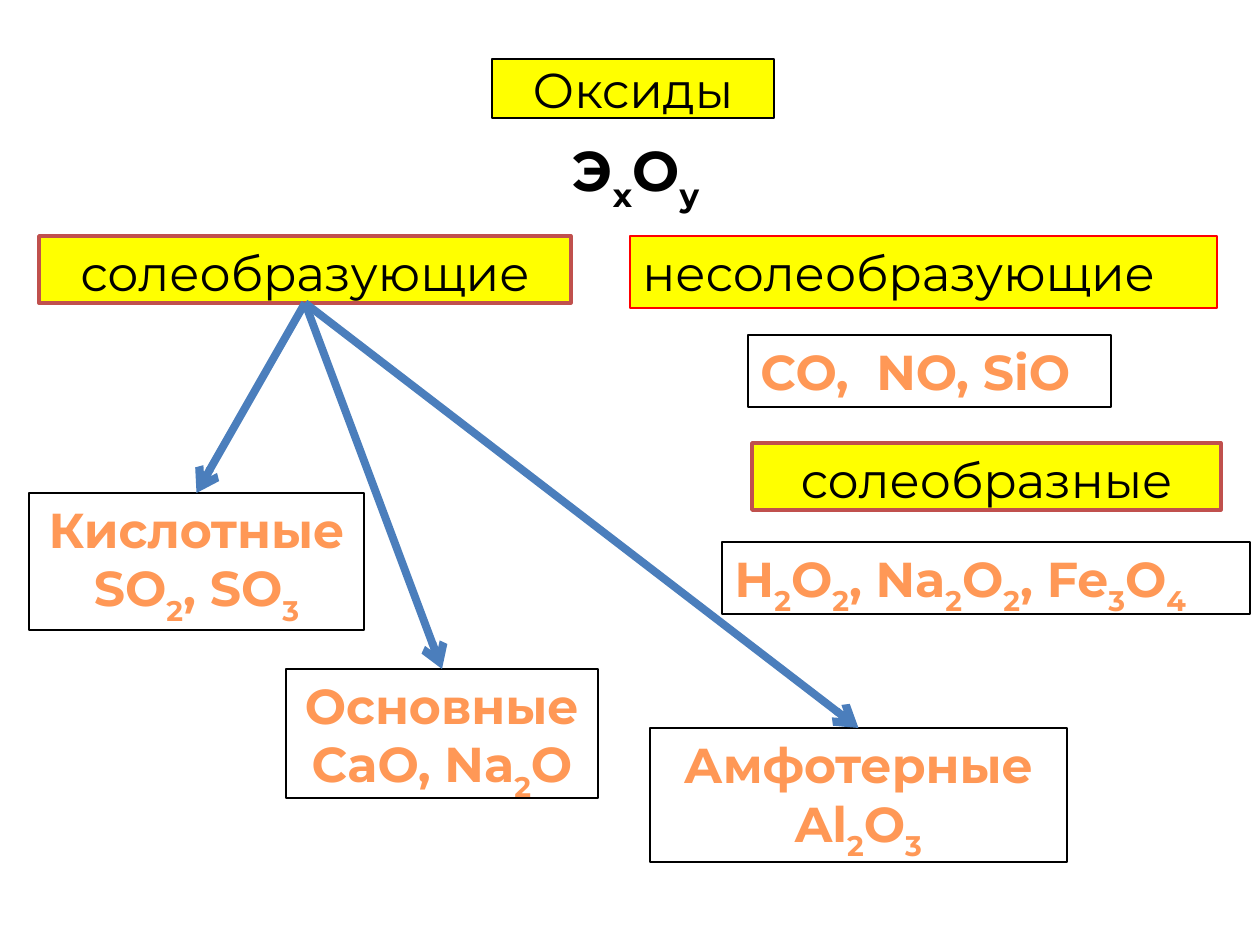
import dataclasses

import pptx
import pptx.dml.color
import pptx.enum.shapes
import pptx.enum.text
import pptx.oxml.ns
import pptx.util
from lxml import etree

EMU_PER_PX = 914400 / 126
ALIGN = pptx.enum.text.PP_ALIGN
ANCHOR = pptx.enum.text.MSO_ANCHOR
AUTO_SIZE = pptx.enum.text.MSO_AUTO_SIZE
BOTTOM, TOP = 2, 0


def px(n):
    return pptx.util.Emu(round(n * EMU_PER_PX))


def rgb(value):
    return pptx.dml.color.RGBColor.from_string(value)


@dataclasses.dataclass(frozen=True)
class Theme:
    font: str = "Montserrat"
    size: int = 28
    formula_size: int = 32
    text: str = "000000"
    example: str = "FF9856"
    heading_fill: str = "FFFF00"
    paper: str = "FFFFFF"
    thin: tuple = ("000000", 0.75)
    red: tuple = ("FF0000", 0.75)
    brick: tuple = ("C0504D", 2)
    arrow: tuple = ("4B7EBC", 4.5)
    subscript: int = -30


class SlideBuilder:
    def __init__(self, prs, theme):
        self.theme = theme
        self.s = prs.slides.add_slide(prs.slide_layouts[5])

    def set_text(self, tf, text, size, color, bold=False, align=ALIGN.CENTER):
        """Fill in one paragraph per line; a character after "_" is a subscript."""
        tf.text = text
        for p in tf.paragraphs:
            p.alignment = align
            head, *rest = p.text.split("_")
            p.text = head
            for part in rest:
                r = p.add_run()
                r.text = part[0]
                r.font._element.set("baseline", str(self.theme.subscript * 1000))
                if part[1:]:
                    p.add_run().text = part[1:]
            for r in p.runs:
                r.font.name = self.theme.font
                r.font.size = pptx.util.Pt(size)
                r.font.bold = bold
                r.font.color.rgb = rgb(color)

    def outline(self, line, style):
        color, width = style
        line.color.rgb = rgb(color)
        line.width = pptx.util.Pt(width)

    def paint(self, sp, fill, line):
        if fill:
            sp.fill.solid()
            sp.fill.fore_color.rgb = rgb(fill)
        else:
            sp.fill.background()
        self.outline(sp.line, line)

    def title(self, text, x, y, w, h):
        sp = self.s.shapes.title
        sp.left, sp.top, sp.width, sp.height = map(px, (x, y, w, h))
        self.paint(sp, self.theme.heading_fill, self.theme.thin)
        tf = sp.text_frame
        tf.auto_size = AUTO_SIZE.NONE
        tf.vertical_anchor = ANCHOR.MIDDLE
        self.set_text(tf, text, self.theme.size, self.theme.text)

    def formula(self, text, x, y, w, h):
        tf = self.s.shapes.add_textbox(*map(px, (x, y, w, h))).text_frame
        tf.word_wrap = True
        self.set_text(tf, text, self.theme.formula_size, self.theme.text, bold=True)

    def box(self, text, rect, fill, line, color, bold=False, wrap=False, fit=False):
        """Draw a framed text; fit makes a left-aligned box as high as its text."""
        sp = self.s.shapes.add_shape(
            pptx.enum.shapes.MSO_SHAPE.RECTANGLE, *map(px, rect))
        sp.shadow.inherit = False
        self.paint(sp, fill, line)
        tf = sp.text_frame
        tf.word_wrap = wrap
        tf.vertical_anchor = ANCHOR.TOP
        tf.auto_size = AUTO_SIZE.SHAPE_TO_FIT_TEXT if fit else AUTO_SIZE.NONE
        align = ALIGN.LEFT if fit else ALIGN.CENTER
        self.set_text(tf, text, self.theme.size, color, bold, align)
        return sp

    def heading(self, text, *rect):
        t = self.theme
        return self.box(text, rect, t.heading_fill, t.brick, t.text, wrap=True)

    def fitted_heading(self, text, *rect):
        t = self.theme
        return self.box(text, rect, t.heading_fill, t.red, t.text, fit=True)

    def oxide_class(self, text, *rect):
        t = self.theme
        return self.box(text, rect, t.paper, t.thin, t.example, bold=True)

    def examples(self, text, *rect):
        t = self.theme
        return self.box(text, rect, None, t.thin, t.example, bold=True, fit=True)

    def arrow(self, source, target):
        cxn = self.s.shapes.add_connector(
            pptx.enum.shapes.MSO_CONNECTOR.STRAIGHT, 0, 0, 0, 0)
        cxn.begin_connect(source, BOTTOM)
        cxn.end_connect(target, TOP)
        self.outline(cxn.line, self.theme.arrow)
        qn = pptx.oxml.ns.qn
        sp_pr = cxn._element.spPr
        etree.SubElement(sp_pr.find(qn("a:ln")), qn("a:tailEnd"), type="arrow")
        etree.SubElement(sp_pr, qn("a:effectLst"))


def main():
    prs = pptx.Presentation()
    prs.slide_width, prs.slide_height = px(1260), px(945)
    b = SlideBuilder(prs, Theme())

    b.title("Оксиды", 492, 59, 282, 59)
    b.formula("Э_хО_у", 532, 129, 208, 108)

    salt_forming = b.heading("солеобразующие", 39, 236, 532, 67)
    classes = [
        b.oxide_class("Кислотные\nSO_2, SO_3", 29, 493, 335, 137),
        b.oxide_class("Основные\nCaO, Na_2O", 286, 669, 312, 129),
        b.oxide_class("Амфотерные\nAl_2O_3", 650, 728, 417, 134),
    ]

    b.fitted_heading("несолеобразующие", 630, 236, 587, 72)
    b.examples("CO,  NO, SiO", 748, 335, 363, 72)
    b.heading("солеобразные", 752, 443, 469, 67)
    b.examples("Н_2O_2, Na_2O_2, Fe_3O_4", 722, 542, 528, 72)

    for oxide_class in reversed(classes):
        b.arrow(salt_forming, oxide_class)

    prs.save("out.pptx")


if __name__ == "__main__":
    main()
